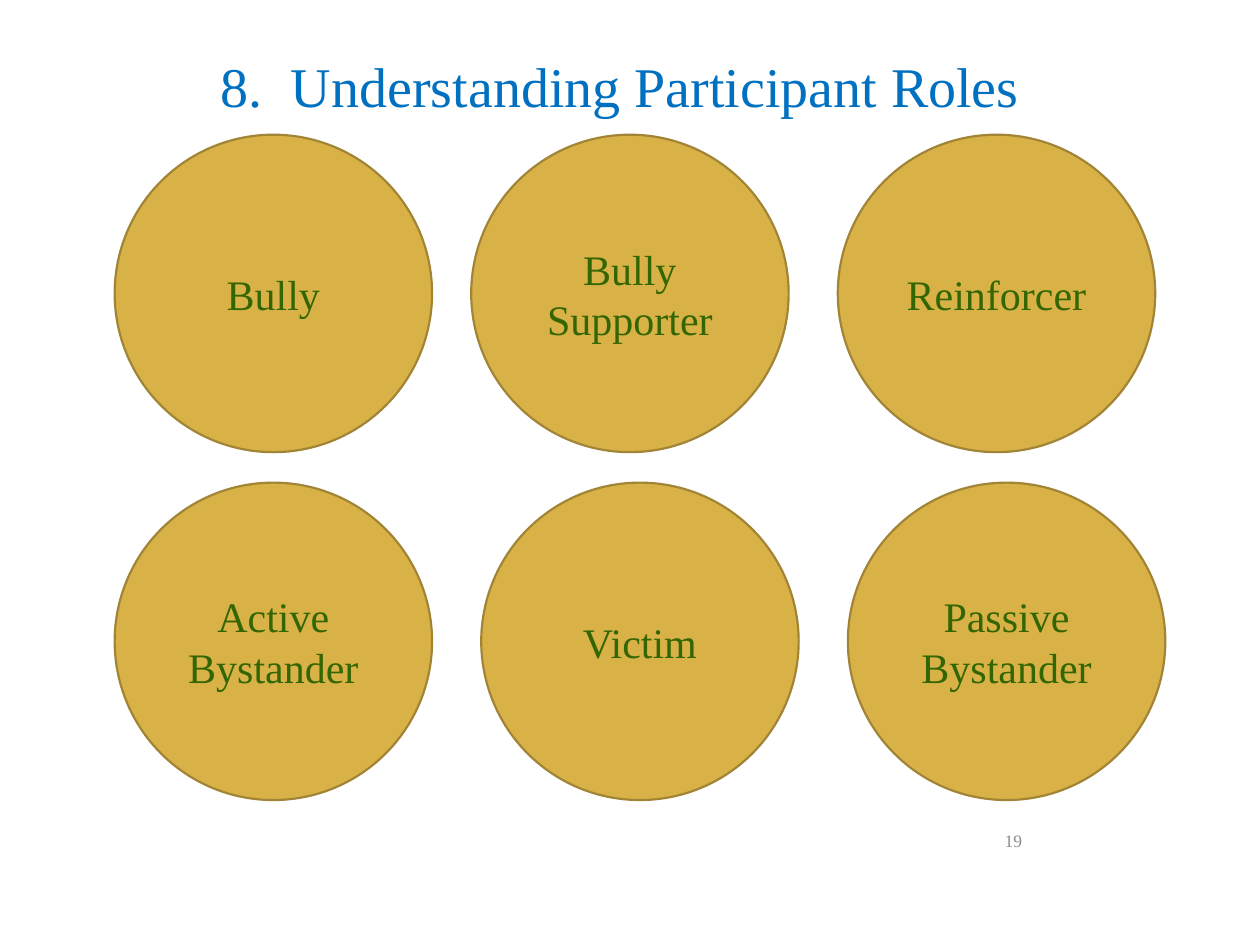
import dataclasses

import pptx
import pptx.dml.color
import pptx.enum.shapes
import pptx.enum.text
import pptx.util

Pt = pptx.util.Pt
RGB = pptx.dml.color.RGBColor.from_string
ALIGN = pptx.enum.text.PP_ALIGN
ANCHOR = pptx.enum.text.MSO_ANCHOR


@dataclasses.dataclass(frozen=True)
class Theme:
    font: str = "Times New Roman"
    title_color: str = "0070C0"
    role_color: str = "336600"
    number_color: str = "8C8C8C"
    circle_fill: str = "D9B247"
    circle_line: str = "A18435"
    title_size: float = 32
    role_size: float = 24
    number_size: float = 10
    line_width: float = 1.25


THEME = Theme()
DIAMETER = 181.4
LEFT = 65.5
PITCH = 209.5
# Top of the row, shift of its columns after the first, role names
ROLE_ROWS = [
    (77, -5.75, ["Bully", "Bully\nSupporter", "Reinforcer"]),
    (275.8, 0, ["Active\nBystander", "Victim", "Passive Bystander"]),
]


def write(sp, text, size, color, align, anchor):
    tf = sp.text_frame
    tf.word_wrap = True
    tf.vertical_anchor = anchor
    tf.text = text
    for p in tf.paragraphs:
        p.alignment = align
        p.font.name = THEME.font
        p.font.size = Pt(size)
        p.font.color.rgb = RGB(color)


def place_title(s, text, left, top, width, height):
    sp = s.shapes.title
    sp.left, sp.top, sp.width, sp.height = map(Pt, (left, top, width, height))
    write(sp, text, THEME.title_size, THEME.title_color, ALIGN.CENTER, ANCHOR.TOP)


def add_role(s, text, left, top, diameter):
    sp = s.shapes.add_shape(pptx.enum.shapes.MSO_SHAPE.OVAL,
                            Pt(left), Pt(top), Pt(diameter), Pt(diameter))
    sp.shadow.inherit = False
    sp.fill.solid()
    sp.fill.fore_color.rgb = RGB(THEME.circle_fill)
    sp.line.color.rgb = RGB(THEME.circle_line)
    sp.line.width = Pt(THEME.line_width)
    write(sp, text, THEME.role_size, THEME.role_color, ALIGN.CENTER, ANCHOR.MIDDLE)


def add_role_row(s, roles, left, top, shift):
    for col, role in enumerate(roles):
        x = left + col * PITCH + (shift if col else 0)
        add_role(s, role, x, top, DIAMETER)


def add_page_number(s, text, left, top, width, height):
    sp = s.shapes.add_textbox(Pt(left), Pt(top), Pt(width), Pt(height))
    write(sp, text, THEME.number_size, THEME.number_color, ALIGN.RIGHT, ANCHOR.MIDDLE)


def main():
    prs = pptx.Presentation()
    prs.slide_width, prs.slide_height = Pt(720), Pt(540)
    s = prs.slides.add_slide(prs.slide_layouts.get_by_name("Title Only"))
    place_title(s, "8.  Understanding Participant Roles", 0, 26, 709, 52)
    for top, shift, roles in ROLE_ROWS:
        add_role_row(s, roles, LEFT, top, shift)
    add_page_number(s, "19", 500.4, 469.4, 90.7, 22.3)
    prs.save("out.pptx")


if __name__ == "__main__":
    main()
